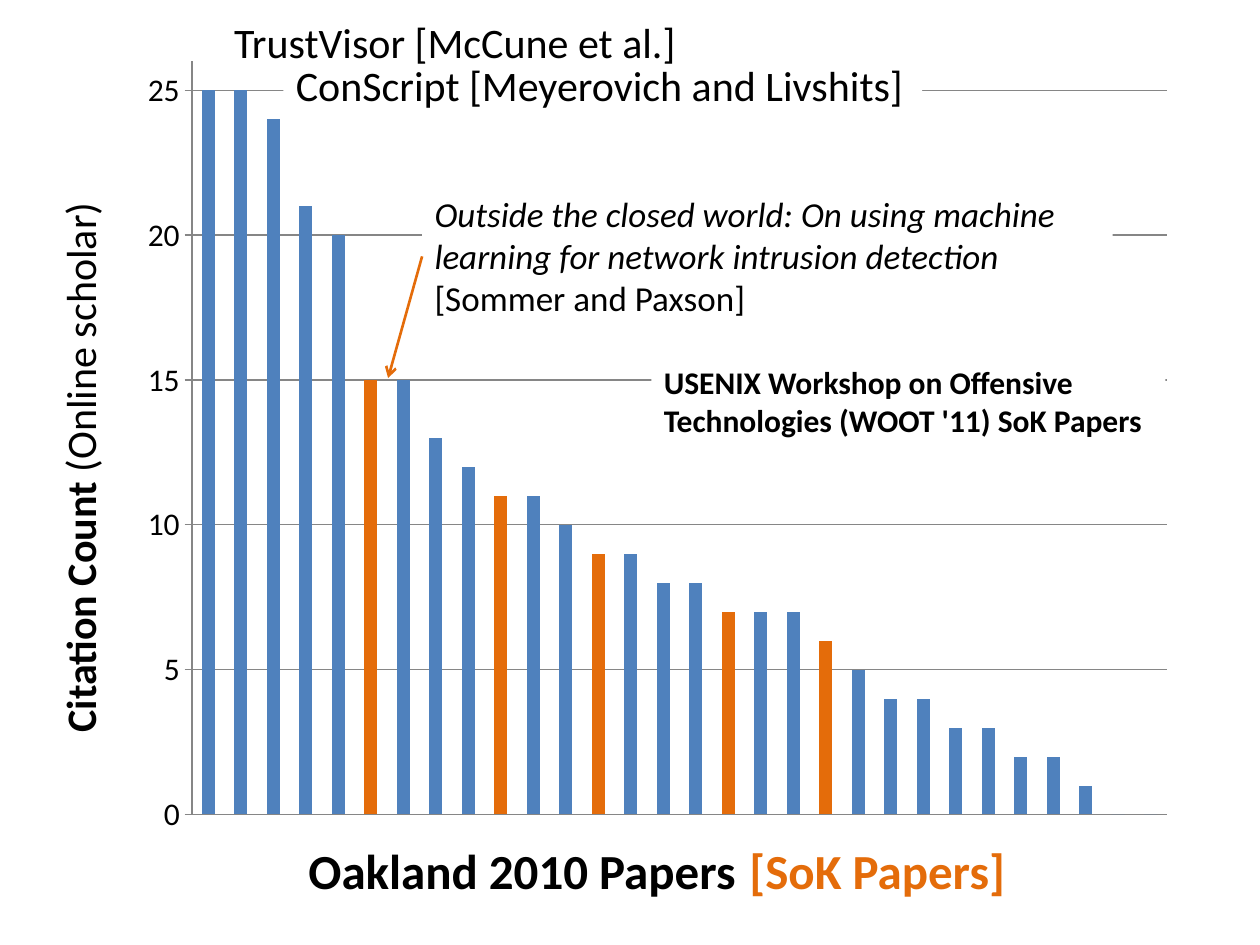
import pptx
import pptx.chart.data
import pptx.dml.color
import pptx.enum.chart
import pptx.enum.shapes
import pptx.enum.text
import pptx.oxml
import pptx.util
from lxml import etree
from pptx.util import Inches

FONT = "Calibri"
COLORS = {"text": "000000", "paper": "FFFFFF", "bar": "4F81BD", "sok": "E46C0A", "grid": "868686"}
CITATIONS = [25, 25, 24, 21, 20, 15, 15, 13, 12, 11, 11, 10, 9, 9, 8,
             8, 7, 7, 7, 6, 5, 4, 4, 3, 3, 2, 2, 1, 0, 0]
SOK_RANKS = [5, 9, 12, 16, 19]


def rgb(name):
    return pptx.dml.color.RGBColor.from_string(COLORS[name])


def add_label(box, runs, size, wrap=True, filled=True):
    """Add a one-paragraph label; each run is (text, bold, italic, color name)."""
    label = slide.shapes.add_textbox(*map(Inches, box))
    if filled:
        label.fill.solid()
        label.fill.fore_color.rgb = rgb("paper")
    frame = label.text_frame
    frame.word_wrap = wrap
    frame.auto_size = pptx.enum.text.MSO_AUTO_SIZE.SHAPE_TO_FIT_TEXT
    for text, bold, italic, color in runs:
        run = frame.paragraphs[0].add_run()
        run.text = text
        run.font.name = FONT
        run.font.size = pptx.util.Pt(size)
        run.font.bold = bold
        run.font.italic = italic
        run.font.color.rgb = rgb(color)
    return label


prs = pptx.Presentation()
prs.slide_width, prs.slide_height = Inches(10), Inches(7.5)
slide = prs.slides.add_slide(prs.slide_layouts[6])

# Citation chart
chart_data = pptx.chart.data.CategoryChartData()
chart_data.categories = [str(rank) for rank in range(1, len(CITATIONS) + 1)]
chart_data.add_series("Series 1", CITATIONS)
chart = slide.shapes.add_chart(
    pptx.enum.chart.XL_CHART_TYPE.COLUMN_CLUSTERED,
    Inches(1.02), Inches(0.36), Inches(8.41), Inches(6.36), chart_data).chart
chart.has_legend = False
chart.has_title = False
chart.font.name = FONT
chart.font.size = pptx.util.Pt(10)
chart.font.color.rgb = rgb("text")

plot = chart.plots[0]
plot.gap_width = 150
plot.vary_by_categories = False
papers = plot.series[0]
papers.invert_if_negative = False
papers.format.fill.solid()
papers.format.fill.fore_color.rgb = rgb("bar")
for rank in SOK_RANKS:
    sok_fill = papers.points[rank].format.fill
    sok_fill.solid()
    sok_fill.fore_color.rgb = rgb("sok")

chart.category_axis.visible = False
counts = chart.value_axis
counts.minimum_scale, counts.maximum_scale, counts.major_unit = 0, 26, 5
counts.major_tick_mark = pptx.enum.chart.XL_TICK_MARK.CROSS
counts.tick_labels.font.size = pptx.util.Pt(18)
counts.has_major_gridlines = True
for line in (counts.format.line, counts.major_gridlines.format.line):
    line.color.rgb = rgb("grid")
    line.width = pptx.util.Pt(0.75)

# Fixed inner plot area, as fractions of the chart
plot_area = chart.element.find(".//{*}plotArea")
for old_layout in plot_area.findall("{*}layout"):
    plot_area.remove(old_layout)
plot_area.insert(0, pptx.oxml.parse_xml(
    '<c:layout xmlns:c="http://schemas.openxmlformats.org/drawingml/2006/chart"><c:manualLayout>'
    '<c:layoutTarget val="inner"/><c:xMode val="edge"/><c:yMode val="edge"/>'
    '<c:x val="0.06"/><c:y val="0.02"/><c:w val="0.92"/><c:h val="0.94"/>'
    '</c:manualLayout></c:layout>'))

# Axis captions and paper labels
add_label((2.35, 6.62, 7.03, 0.57),
          [("Oakland 2010 Papers \t", True, False, "text"), ("[SoK Papers]", True, False, "sok")],
          28, filled=False)
add_label((2.25, 0.42, 5.07, 0.5),
          [("ConScript [Meyerovich and Livshits]", False, False, "text")], 24, wrap=False)
closed_world = add_label(
    (3.35, 1.48, 5.48, 1.11),
    [("Outside the closed world: On using machine learning for network intrusion detection ",
      False, True, "text"), ("[Sommer and Paxson]", False, False, "text")], 20)

arrow = slide.shapes.add_connector(
    pptx.enum.shapes.MSO_CONNECTOR.STRAIGHT, Inches(3.35), Inches(2.03), Inches(3.08), Inches(3))
arrow.begin_connect(closed_world, 1)
arrow.line.color.rgb = rgb("sok")
arrow.line.width = pptx.util.Pt(1.5)
drawing_ns = "{http://schemas.openxmlformats.org/drawingml/2006/main}"
etree.SubElement(arrow.line._get_or_add_ln(), drawing_ns + "tailEnd", type="arrow")
etree.SubElement(arrow.element.spPr, drawing_ns + "effectLst")

count_caption = add_label(
    (-1.63, 3.4, 4.52, 0.5),
    [("Citation Count", True, False, "text"), (" (Online scholar)", False, False, "text")],
    24, wrap=False, filled=False)
count_caption.rotation = 270
trust_visor = add_label((1.76, 0.08, 3.74, 0.45),
                        [("TrustVisor [McCune et al.]", False, False, "text")], 24, wrap=False)
trust_visor.text_frame.margin_bottom = 0
add_label((5.17, 2.83, 4.08, 0.71),
          [("USENIX Workshop on Offensive Technologies (WOOT '11) SoK Papers",
            True, False, "text")], 18)

prs.save("out.pptx")
